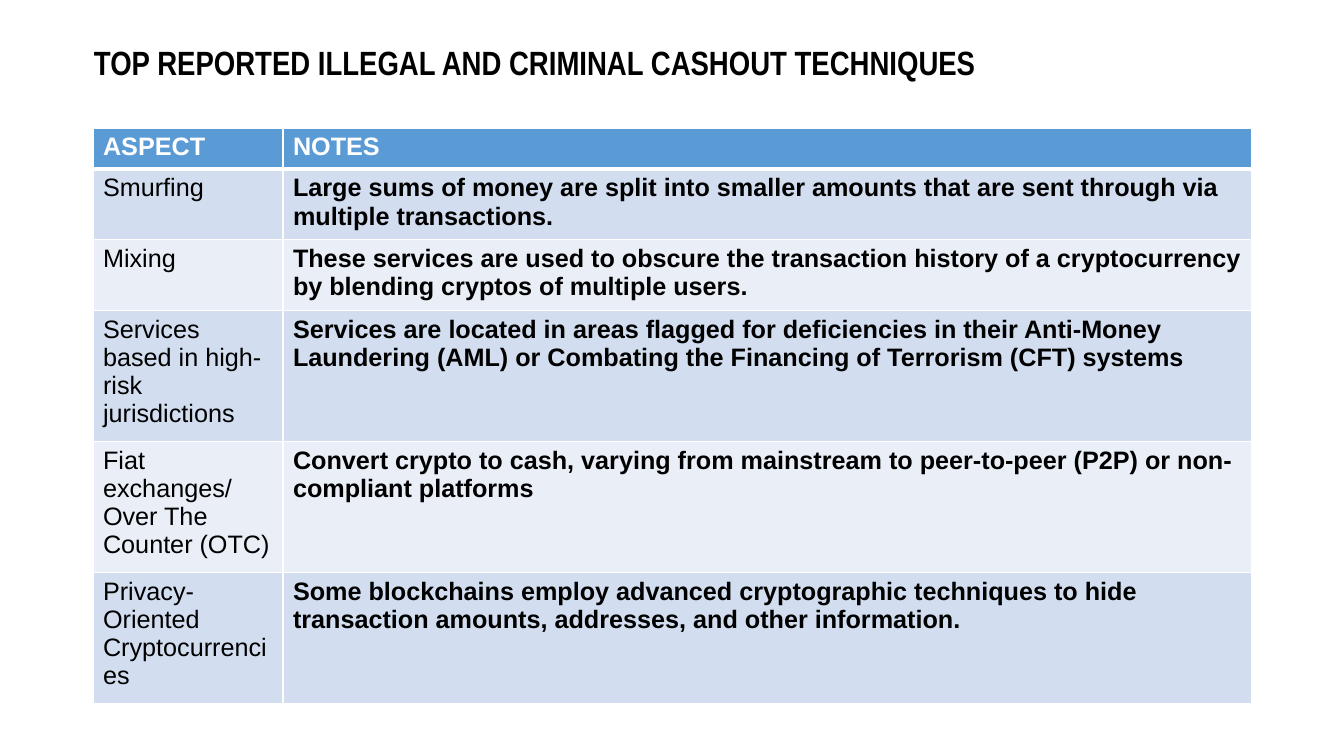
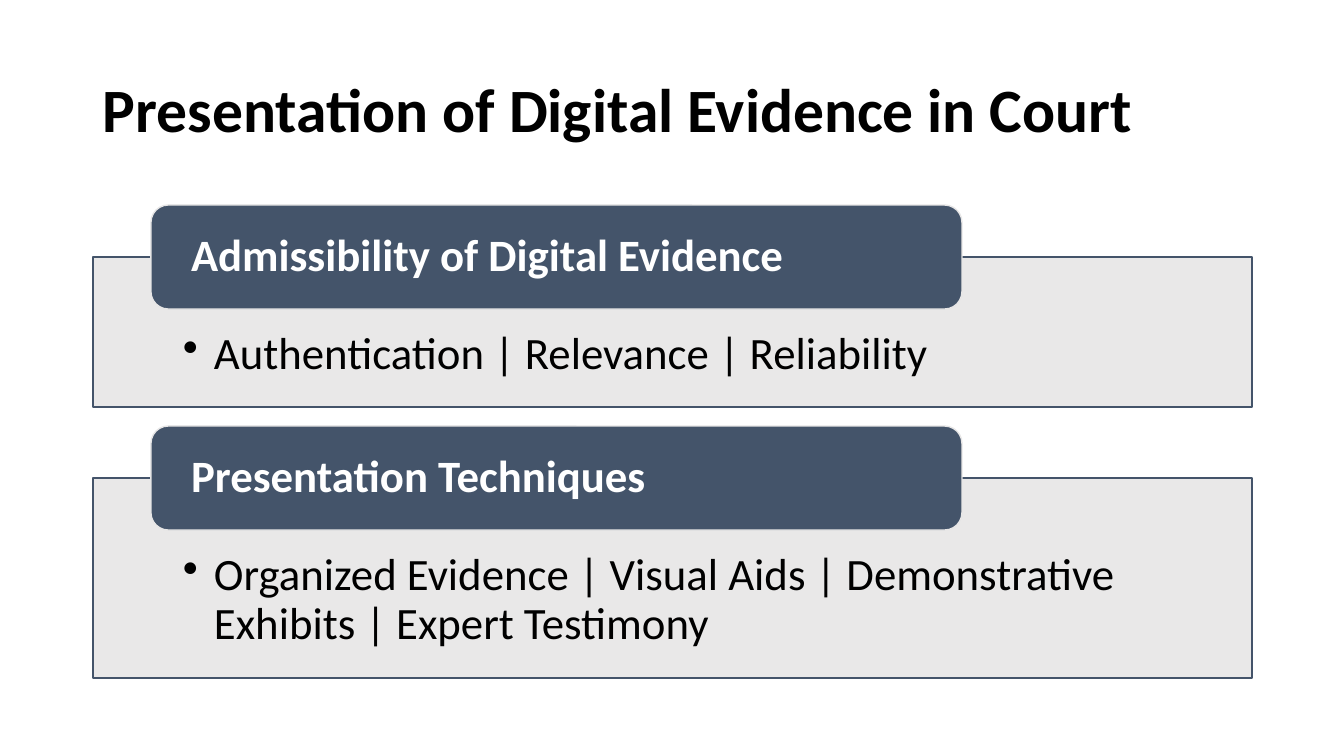
from lxml import etree
from pptx import Presentation
from pptx.dml.color import RGBColor
from pptx.enum import shapes, text
from pptx.oxml import ns
from pptx.util import Emu, Pt

SCALE = 914400 / 100.8

WHITE = RGBColor(0xFF, 0xFF, 0xFF)
BLACK = RGBColor(0, 0, 0)
BLUE = RGBColor(0x5B, 0x9B, 0xD5)
BANDS = RGBColor(0xD2, 0xDE, 0xEF), RGBColor(0xEA, 0xEF, 0xF7)
SLATE = RGBColor(0x44, 0x54, 0x6A)
GREY = RGBColor(0xE7, 0xE6, 0xE6)

LEFT, WIDTH = 93, 1159

HEAD = ("ASPECT", "NOTES")
ROWS = [
    ("Smurfing",
     "Large sums of money are split into smaller amounts that are sent "
     "through via multiple transactions."),
    ("Mixing",
     "These services are used to obscure the transaction history of a "
     "cryptocurrency by blending cryptos of multiple users."),
    ("Services based in high-risk jurisdictions",
     "Services are located in areas flagged for deficiencies in their "
     "Anti-Money Laundering (AML) or Combating the Financing of Terrorism "
     "(CFT) systems"),
    ("Fiat exchanges/ Over The Counter (OTC)",
     "Convert crypto to cash, varying from mainstream to peer-to-peer (P2P) "
     "or non-compliant platforms"),
    ("Privacy-Oriented Cryptocurrencies",
     "Some blockchains employ advanced cryptographic techniques to hide "
     "transaction amounts, addresses, and other information."),
]
HEIGHTS = (41, 67, 67, 123, 122, 122)

PANELS = [
    ("Admissibility of Digital Evidence",
     "Authentication | Relevance | Reliability", 150),
    ("Presentation Techniques",
     "Organized Evidence | Visual Aids | Demonstrative Exhibits | "
     "Expert Testimony", 200),
]


def px(n):
    return Emu(round(n * SCALE))


def add_xml(parent, tag, **attrs):
    return etree.SubElement(parent, ns.qn(tag), attrs)


def write(frame, words, size, face, color, bold=False, space=None):
    """Fill a text frame with one paragraph in one style."""
    frame.word_wrap = True
    para = frame.paragraphs[0]
    para.text = words
    para.alignment = text.PP_ALIGN.LEFT
    para.line_spacing = space
    font = para.font
    font.size, font.name, font.bold = Pt(size), face, bold
    font.color.rgb = color
    return para


def add_title(slide, box, words, size, face):
    frame = slide.shapes.add_textbox(*map(px, box)).text_frame
    frame.vertical_anchor = text.MSO_ANCHOR.MIDDLE
    write(frame, words, size, face, BLACK, True, 0.9)


def add_box(slide, kind, box, fill, line):
    shape = slide.shapes.add_shape(kind, *map(px, box))
    shape.shadow.inherit = False
    shape.fill.solid()
    shape.fill.fore_color.rgb = fill
    shape.line.color.rgb = line
    shape.line.width = Pt(1)
    return shape


def set_pad(frame, side, top, base):
    frame.margin_left = frame.margin_right = px(side)
    frame.margin_top, frame.margin_bottom = px(top), px(base)


# Table
def rule_cell(cell, base):
    """White borders; the bottom one has its own width in points."""
    props = cell._tc.get_or_add_tcPr()
    for i, (side, width) in enumerate(zip("LRTB", (1, 1, 1, base))):
        line = etree.Element(ns.qn("a:ln" + side), w=str(Pt(width)))
        add_xml(add_xml(line, "a:solidFill"), "a:srgbClr", val=str(WHITE))
        props.insert(i, line)


def add_grid(slide, left, top, widths):
    rows = [HEAD] + ROWS
    grid = slide.shapes.add_table(
        len(rows), len(HEAD), px(left), px(top),
        px(sum(widths)), px(sum(HEIGHTS))).table
    for col, width in zip(grid.columns, widths):
        col.width = px(width)
    for r, (row, high) in enumerate(zip(rows, HEIGHTS)):
        grid.rows[r].height = px(high)
        for c, words in enumerate(row):
            cell = grid.cell(r, c)
            cell.fill.solid()
            cell.fill.fore_color.rgb = BANDS[(r - 1) % 2] if r else BLUE
            rule_cell(cell, 1 if r else 3)
            write(cell.text_frame, words, 18, "Arial",
                  BLACK if r else WHITE, r == 0 or c == 1)


# Panel with a heading tab over its top edge
def add_panel(slide, left, top, width, high, head, body):
    kinds = shapes.MSO_SHAPE
    panel = add_box(slide, kinds.RECTANGLE, (left, top, width, high),
                    GREY, SLATE)
    tint = panel.fill._xPr.find(".//" + ns.qn("a:srgbClr"))
    add_xml(tint, "a:alpha", val="90000")
    frame = panel.text_frame
    frame.vertical_anchor = text.MSO_ANCHOR.TOP
    set_pad(frame, 90, 74, 25)
    para = write(frame, body, 32, "Calibri", BLACK, space=0.9)
    props = para._p.get_or_add_pPr()
    props.set("marL", str(px(31)))
    props.set("indent", str(px(-31)))
    bullet = etree.Element(ns.qn("a:buChar"), char="•")
    props.find(ns.qn("a:lnSpc")).addnext(bullet)

    tab = add_box(slide, kinds.ROUNDED_RECTANGLE,
                  (left + 58, top - 52, width * 7 // 10, 104), SLATE, GREY)
    tab.text_frame.vertical_anchor = text.MSO_ANCHOR.MIDDLE
    set_pad(tab.text_frame, 35, 0, 0)
    write(tab.text_frame, head, 32, "Calibri", WHITE, True, 0.9)


# Slides
def build_table(slide):
    add_title(slide, (84, -8, WIDTH, 146),
              "TOP REPORTED ILLEGAL AND CRIMINAL CASHOUT TECHNIQUES",
              24, "Arial Narrow")
    add_grid(slide, LEFT, 128, (190, WIDTH - 190))


def build_court(slide):
    add_title(slide, (LEFT, 40, WIDTH, 146),
              "Presentation of Digital Evidence in Court", 44, "Calibri")
    top = 257
    for head, body, high in PANELS:
        add_panel(slide, LEFT, top, WIDTH, high, head, body)
        top += high + 71


def main():
    deck = Presentation()
    deck.slide_width, deck.slide_height = px(1344), px(756)
    for build in (build_table, build_court):
        build(deck.slides.add_slide(deck.slide_layouts[6]))
    deck.save("out.pptx")


if __name__ == "__main__":
    main()
